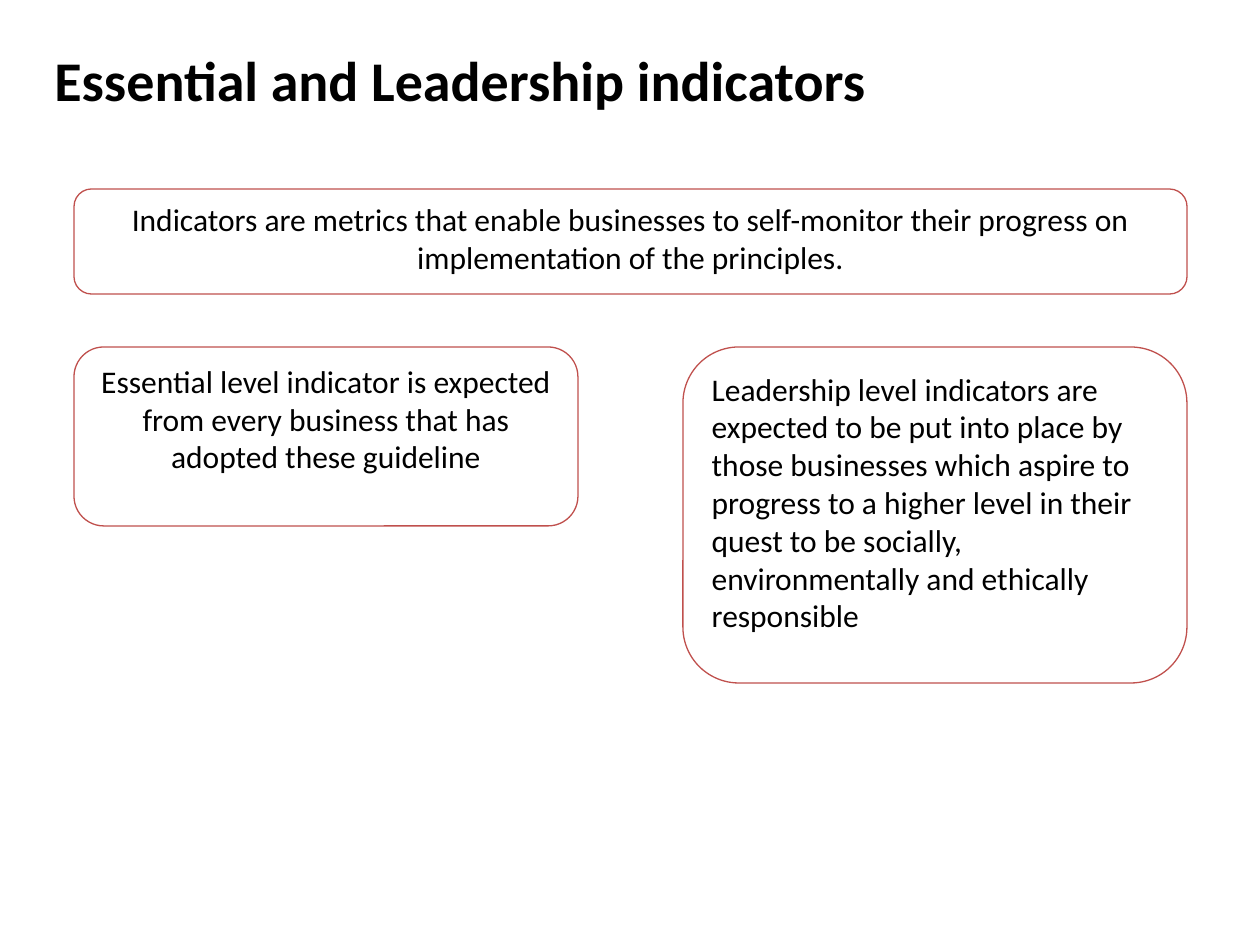
import pptx
import pptx.util
import pptx.dml.color
import pptx.enum.shapes
import pptx.enum.text

PX = 914400 / 126
HUES = {"ink": "000000", "edge": "C0504D"}
ALIGN = pptx.enum.text.PP_ALIGN
ANCHOR = pptx.enum.text.MSO_ANCHOR
TITLE = {"name": "Calibri", "size": pptx.util.Pt(32), "bold": True}
BODY = {"name": "Calibri", "size": pptx.util.Pt(18), "bold": False}
LEFT, RIGHT, WIDE, HALF = 74, 683, 1113, 504
TOP, ROW = 189, 347
CARDS = [
    ((LEFT, ROW, HALF, 179), ALIGN.CENTER,
     "Essential level indicator is expected from every business that has "
     "adopted these guideline"),
    ((LEFT, TOP, WIDE, 105), ALIGN.CENTER,
     "Indicators are metrics that enable businesses to self-monitor their "
     "progress on implementation of the principles."),
    ((RIGHT, ROW, HALF, 336), ALIGN.LEFT,
     "Leadership level indicators are expected to be put into place by those "
     "businesses which aspire to progress to a higher level in their quest "
     "to be socially, environmentally and ethically responsible"),
]


def emu(*spans):
    """Turn px lengths into EMU."""
    return [pptx.util.Emu(round(span * PX)) for span in spans]


def tint(name):
    """Give the named colour."""
    return pptx.dml.color.RGBColor.from_string(HUES[name])


def write(shape, text, style, align, anchor):
    """Put one styled paragraph in a shape."""
    frame = shape.text_frame
    frame.word_wrap = True
    frame.vertical_anchor = anchor
    para = frame.paragraphs[0]
    para.alignment = align
    run = para.add_run()
    run.text = text
    for key, value in style.items():
        setattr(run.font, key, value)
    run.font.color.rgb = tint("ink")


def add_title(slide, text):
    """Add the slide heading."""
    box = slide.shapes.add_textbox(*emu(42, 32, 1134, 94))
    write(box, text, TITLE, ALIGN.LEFT, ANCHOR.MIDDLE)


def add_card(slide, place, align, text):
    """Add a rounded outline with text."""
    kind = pptx.enum.shapes.MSO_SHAPE.ROUNDED_RECTANGLE
    card = slide.shapes.add_shape(kind, *emu(*place))
    card.shadow.inherit = False
    card.fill.background()
    card.line.color.rgb = tint("edge")
    card.line.width = pptx.util.Pt(0.75)
    write(card, text, BODY, align, ANCHOR.TOP)


def main():
    """Build and save the slide."""
    deck = pptx.Presentation()
    deck.slide_width, deck.slide_height = emu(1260, 945)
    slide = deck.slides.add_slide(deck.slide_layouts[6])
    add_title(slide, "Essential and Leadership indicators")
    for card in CARDS:
        add_card(slide, *card)
    deck.save("out.pptx")


if __name__ == "__main__":
    main()
